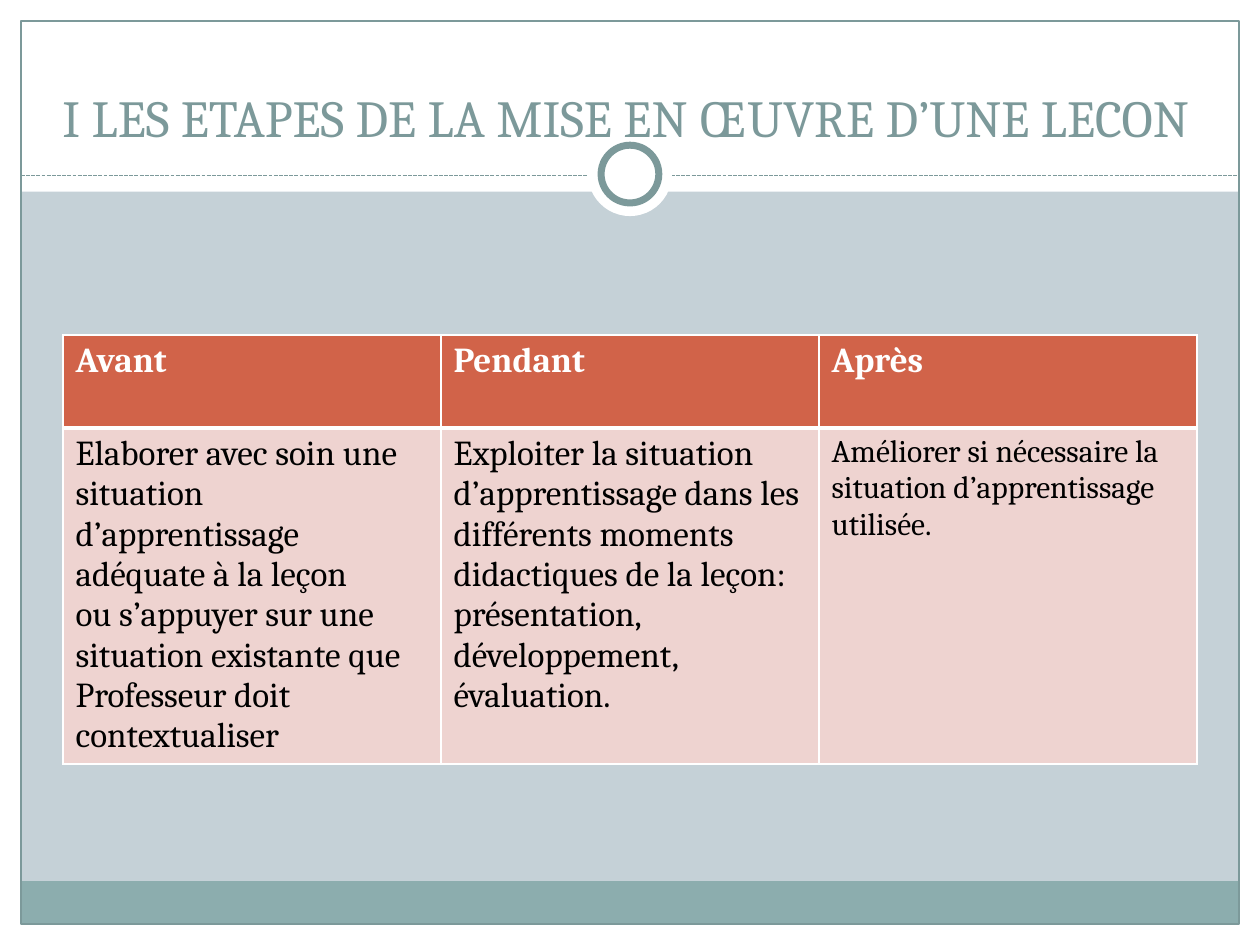
import pptx
import pptx.util
import pptx.dml.color
import pptx.enum.dml
import pptx.enum.shapes
import pptx.enum.text
import pptx.oxml
import pptx.oxml.ns

Pt = pptx.util.Pt
SHAPE = pptx.enum.shapes.MSO_SHAPE
FONT = "Cambria"
WIDE, HIGH = 720, 540
EDGE = 12

COLORS = {
    "back": "C5D1D7",
    "white": "FFFFFF",
    "band": "8CADAE",
    "frame": "7C999A",
    "head": "D16349",
    "body": "EED3D0",
    "black": "000000",
}

HEADS = ["Avant", "Pendant", "Après"]
STEPS = [
    ["Elaborer avec soin une situation d’apprentissage adéquate à la leçon",
     "ou s’appuyer sur une situation existante que",
     "Professeur doit contextualiser"],
    ["Exploiter la situation d’apprentissage dans les différents moments "
     "didactiques de la leçon: présentation, développement, évaluation."],
    ["Améliorer si nécessaire la situation d’apprentissage utilisée."],
]
SIZES = [20, 20, 18]


def color(name):
    return pptx.dml.color.RGBColor.from_string(COLORS[name])


def style(font, tint, **form):
    for key, value in {"name": FONT, **form}.items():
        setattr(font, key, value)
    font.color.rgb = color(tint)


def paint(part, tint):
    part.fill.solid()
    part.fill.fore_color.rgb = color(tint)


def block(slide, box, kind=SHAPE.RECTANGLE, fill=None, line=None, width=0.75):
    shape = slide.shapes.add_shape(kind, *map(Pt, box))
    shape.shadow.inherit = False
    if fill:
        paint(shape, fill)
    else:
        shape.fill.background()
    if line:
        shape.line.color.rgb = color(line)
        shape.line.width = Pt(width)
    else:
        shape.line.fill.background()


def draw_frame(slide, box):
    left, top, width, height = box
    inner = (left + EDGE, top + EDGE, width - 2 * EDGE, height - 2 * EDGE)

    # White margins and header
    for part in [
        (left, top + height - EDGE, width, EDGE),
        (left, top, width, 109.5),
        (left, top, EDGE, height),
        (left + width - EDGE, top, EDGE, height),
    ]:
        block(slide, part, fill="white")

    # Bottom band and outline
    block(slide, (inner[0], 503.5, inner[2], 24.5), fill="band")
    block(slide, inner, line="frame")

    # Dashed rule
    rule = slide.shapes.add_connector(
        pptx.enum.shapes.MSO_CONNECTOR.STRAIGHT,
        Pt(inner[0]), Pt(100.5), Pt(inner[0] + inner[2]), Pt(100.5))
    rule.line.color.rgb = color("frame")
    rule.line.width = Pt(0.75)
    rule.line.dash_style = pptx.enum.dml.MSO_LINE.SQUARE_DOT
    rule._element.spPr.append(pptx.oxml.parse_xml(
        f'<a:effectLst {pptx.oxml.ns.nsdecls("a")}/>'))

    # Ring centred on the rule
    mid = left + width / 2
    for size, line in [(48, None), (33, "frame")]:
        block(slide, (mid - size / 2, 99.5 - size / 2, size, size),
              SHAPE.OVAL, "white", line, 4)


def place_title(slide, box):
    title = slide.shapes.title
    for key, value in zip(("left", "top", "width", "height"), box):
        setattr(title, key, Pt(value))
    frame = title.text_frame
    frame.text = "I LES ETAPES DE LA MISE EN ŒUVRE D’UNE LECON"
    form = {
        "word_wrap": True,
        "auto_size": pptx.enum.text.MSO_AUTO_SIZE.NONE,
        "vertical_anchor": pptx.enum.text.MSO_ANCHOR.BOTTOM,
    }
    for key, value in form.items():
        setattr(frame, key, value)
    para = frame.paragraphs[0]
    para.alignment = pptx.enum.text.PP_ALIGN.CENTER
    style(para.runs[0].font, "frame", size=Pt(29.7))
    # Bring the title in front of the ring
    slide.shapes._spTree.append(title._element)


def edge(cell, side, width):
    cell._tc.get_or_add_tcPr().append(pptx.oxml.parse_xml(
        f'<a:ln{side} {pptx.oxml.ns.nsdecls("a")} w="{Pt(width)}">'
        f'<a:solidFill><a:srgbClr val="{COLORS["white"]}"/></a:solidFill>'
        f'</a:ln{side}>'))


def fill_cell(cell, lines, fill, tint, thick, **form):
    for side in "LRTB":
        edge(cell, side, 3 if side == thick else 1)
    paint(cell, fill)
    cell.text = "\n".join(lines)
    for para in cell.text_frame.paragraphs:
        style(para.runs[0].font, tint, **form)


def draw_table(slide, box):
    table = slide.shapes.add_table(2, len(HEADS), *map(Pt, box)).table
    table.horz_banding = False
    for col in table.columns:
        col.width = Pt(box[2] / len(HEADS))
    table.rows[0].height = Pt(53)
    table.rows[1].height = Pt(box[3] - 53)
    for col, (head, lines, size) in enumerate(zip(HEADS, STEPS, SIZES)):
        fill_cell(table.cell(0, col), [head], "head", "white", "B",
                  size=Pt(20), bold=True)
        fill_cell(table.cell(1, col), lines, "body", "black", "T",
                  size=Pt(size), bold=False)


def main():
    deck = pptx.Presentation()
    deck.slide_width, deck.slide_height = Pt(WIDE), Pt(HIGH)
    slide = deck.slides.add_slide(deck.slide_layouts[5])
    paint(slide.background, "back")
    draw_frame(slide, (0, 0, WIDE, HIGH))
    place_title(slide, (22, 28, 672, 60))
    draw_table(slide, (36, 191.5, 648, 245))
    deck.save("out.pptx")


if __name__ == "__main__":
    main()
